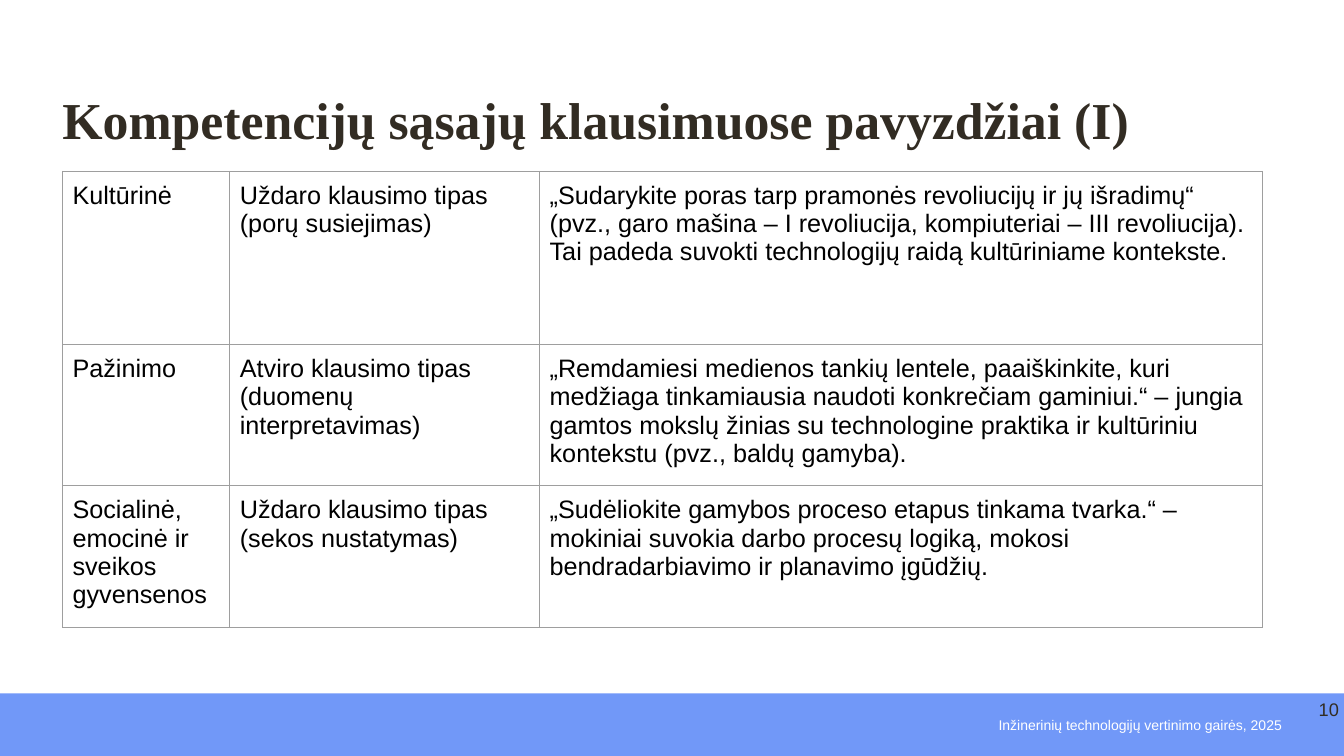
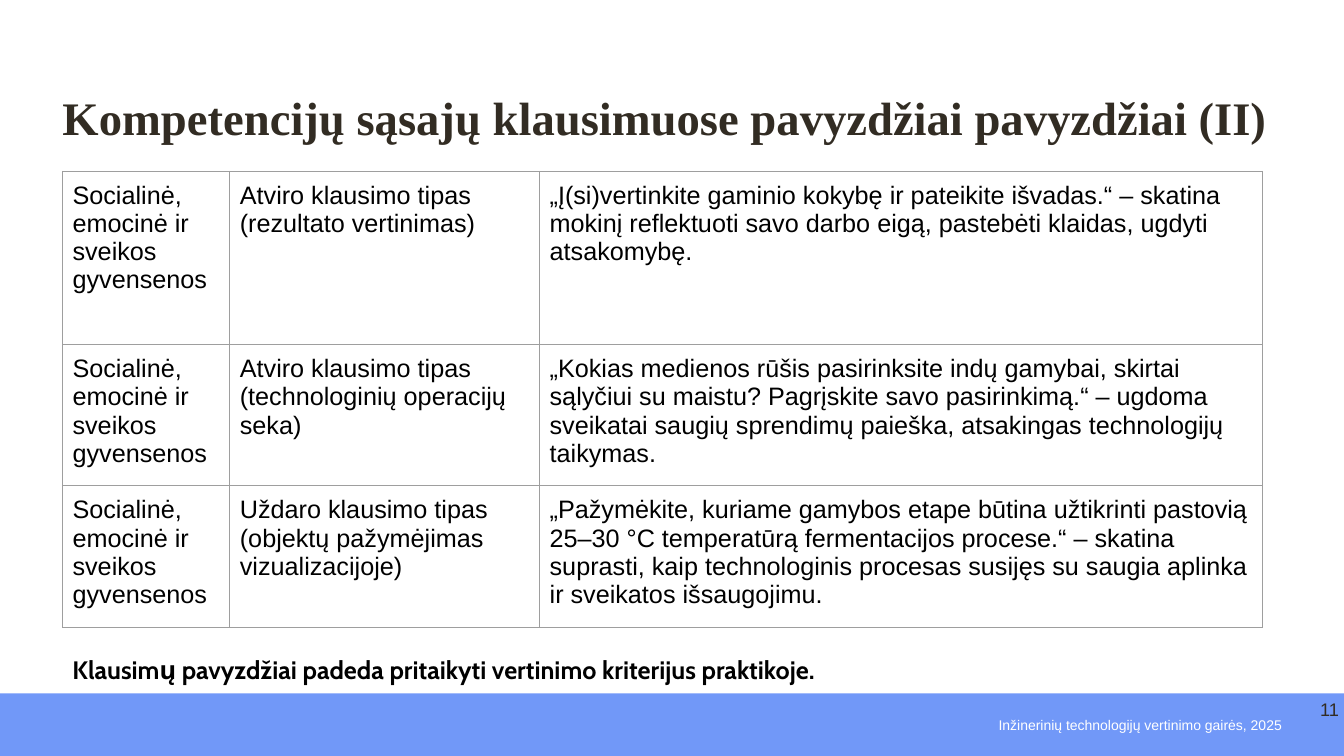
from lxml import etree
from pptx import Presentation
from pptx import util as u
from pptx.dml import color
from pptx.enum import shapes, text
from pptx.oxml import ns

WIDTH, HEIGHT = u.Inches(13.33), u.Inches(7.5)
BAND, INK, BLACK, WHITE, RULE = "7198F8", "322C23", "000000", "FFFFFF", "9E9E9E"
BODY_FONT, TITLE_FONT, NOTE_FONT = "Arial", "Times New Roman", "Cabin"
FOOTER = "Inžinerinių technologijų vertinimo gairės, 2025"
PADDING = u.Inches(0.1)

# Lengths are percentages of the slide's width and height.
LEFT = 4.65
BAND_TOP = 91.73
TABLE_TOP = 22.67
COLUMNS = (12.45, 23.05, 53.8)
ROWS = (22.93, 17.6, 17.6)

SOCIAL = "Socialinė, emocinė ir sveikos gyvensenos"

FIRST_EXAMPLES = [
    ("Kultūrinė",
     "Uždaro klausimo tipas (porų susiejimas)",
     "„Sudarykite poras tarp pramonės revoliucijų ir jų išradimų“ (pvz., garo "
     "mašina – I revoliucija, kompiuteriai – III revoliucija). Tai padeda suvokti "
     "technologijų raidą kultūriniame kontekste."),
    ("Pažinimo",
     "Atviro klausimo tipas (duomenų interpretavimas)",
     "„Remdamiesi medienos tankių lentele, paaiškinkite, kuri medžiaga "
     "tinkamiausia naudoti konkrečiam gaminiui.“ – jungia gamtos mokslų žinias su "
     "technologine praktika ir kultūriniu kontekstu (pvz., baldų gamyba)."),
    (SOCIAL,
     "Uždaro klausimo tipas (sekos nustatymas)",
     "„Sudėliokite gamybos proceso etapus tinkama tvarka.“ – mokiniai suvokia "
     "darbo procesų logiką, mokosi bendradarbiavimo ir planavimo įgūdžių."),
]

SECOND_EXAMPLES = [
    (SOCIAL,
     "Atviro klausimo tipas (rezultato vertinimas)",
     "„Į(si)vertinkite gaminio kokybę ir pateikite išvadas.“ – skatina mokinį "
     "reflektuoti savo darbo eigą, pastebėti klaidas, ugdyti atsakomybę."),
    (SOCIAL,
     "Atviro klausimo tipas (technologinių operacijų seka)",
     "„Kokias medienos rūšis pasirinksite indų gamybai, skirtai sąlyčiui su "
     "maistu? Pagrįskite savo pasirinkimą.“ – ugdoma sveikatai saugių sprendimų "
     "paieška, atsakingas technologijų taikymas."),
    (SOCIAL,
     "Uždaro klausimo tipas (objektų pažymėjimas vizualizacijoje)",
     "„Pažymėkite, kuriame gamybos etape būtina užtikrinti pastovią 25–30 °C "
     "temperatūrą fermentacijos procese.“ – skatina suprasti, kaip technologinis "
     "procesas susijęs su saugia aplinka ir sveikatos išsaugojimu."),
]


def rgb(value):
    return color.RGBColor.from_string(value)


def across(percent):
    return round(WIDTH * percent / 100)


def down(percent):
    return round(HEIGHT * percent / 100)


def area(left, top, width, height):
    return across(left), down(top), across(width), down(height)


def write(paragraph, words, size, ink, font=BODY_FONT, bold=False):
    run = paragraph.add_run()
    run.text = words
    run.font.name = font
    run.font.size = u.Pt(size)
    run.font.bold = bold
    run.font.color.rgb = rgb(ink)


def pad(holder, margin):
    """Set the same inner margin on all sides of a text frame or cell."""
    holder.margin_left = holder.margin_right = margin
    holder.margin_top = holder.margin_bottom = margin


def add_text(slide, place, words, size, ink, align=text.PP_ALIGN.LEFT,
             anchor=text.MSO_ANCHOR.TOP, margin=0, **style):
    frame = slide.shapes.add_textbox(*area(*place)).text_frame
    frame.word_wrap = True
    frame.vertical_anchor = anchor
    pad(frame, margin)
    paragraph = frame.paragraphs[0]
    paragraph.alignment = align
    write(paragraph, words, size, ink, **style)
    return paragraph


def add_band(slide):
    band = slide.shapes.add_shape(shapes.MSO_SHAPE.RECTANGLE,
                                  *area(0, BAND_TOP, 100, 100 - BAND_TOP))
    band.shadow.inherit = False
    band.fill.solid()
    band.fill.fore_color.rgb = rgb(BAND)
    band.line.fill.background()


def add_title(slide, words, size):
    title = add_text(slide, (LEFT, 12.53, 91.2, 9.33), words, size, INK,
                     font=TITLE_FONT, bold=True)
    title.line_spacing = 0.9


def add_footer(slide, number):
    right = text.PP_ALIGN.RIGHT
    add_text(slide, (61.59, 93.6, 33.76, 4.67), FOOTER, 10, WHITE,
             align=right, anchor=text.MSO_ANCHOR.MIDDLE)
    add_text(slide, (93.62, 92.4, 6, 7.6), str(number), 13, INK, align=right)


def rule_cell(cell):
    """Draw a thin line on each side of a cell, ahead of its fill."""
    properties = cell._tc.get_or_add_tcPr()
    for position, side in enumerate(("lnL", "lnR", "lnT", "lnB")):
        line = etree.Element(ns.qn("a:" + side), w=str(u.Pt(0.75)))
        fill = etree.SubElement(line, ns.qn("a:solidFill"))
        etree.SubElement(fill, ns.qn("a:srgbClr"), val=RULE)
        properties.insert(position, line)


def add_examples(slide, examples):
    place = area(LEFT, TABLE_TOP, sum(COLUMNS), sum(ROWS))
    table = slide.shapes.add_table(len(ROWS), len(COLUMNS), *place).table
    table.first_row = table.horz_banding = False
    for column, width in zip(table.columns, COLUMNS):
        column.width = across(width)
    for row, height, example in zip(table.rows, ROWS, examples):
        row.height = down(height)
        for cell, words in zip(row.cells, example):
            cell.fill.background()
            rule_cell(cell)
            pad(cell, PADDING)
            write(cell.text_frame.paragraphs[0], words, 18, BLACK)


def add_note(slide, words):
    note = add_text(slide, (LEFT, 84.93, 88.75, 6.67), words, 18, BLACK,
                    margin=PADDING, font=NOTE_FONT, bold=True)
    note.line_spacing = 1.08
    note.space_after = u.Pt(8)


def add_examples_slide(deck, number, title, title_size, examples):
    slide = deck.slides.add_slide(deck.slide_layouts[6])
    add_band(slide)
    add_title(slide, title, title_size)
    add_footer(slide, number)
    add_examples(slide, examples)
    return slide


def main():
    deck = Presentation()
    deck.slide_width, deck.slide_height = WIDTH, HEIGHT
    add_examples_slide(deck, 10, "Kompetencijų sąsajų klausimuose pavyzdžiai (I)",
                       37, FIRST_EXAMPLES)
    closing = add_examples_slide(
        deck, 11, "Kompetencijų sąsajų klausimuose pavyzdžiai pavyzdžiai (II)",
        33.3, SECOND_EXAMPLES)
    add_note(closing, "Klausimų pavyzdžiai padeda pritaikyti vertinimo kriterijus praktikoje.")
    deck.save("out.pptx")


if __name__ == "__main__":
    main()
